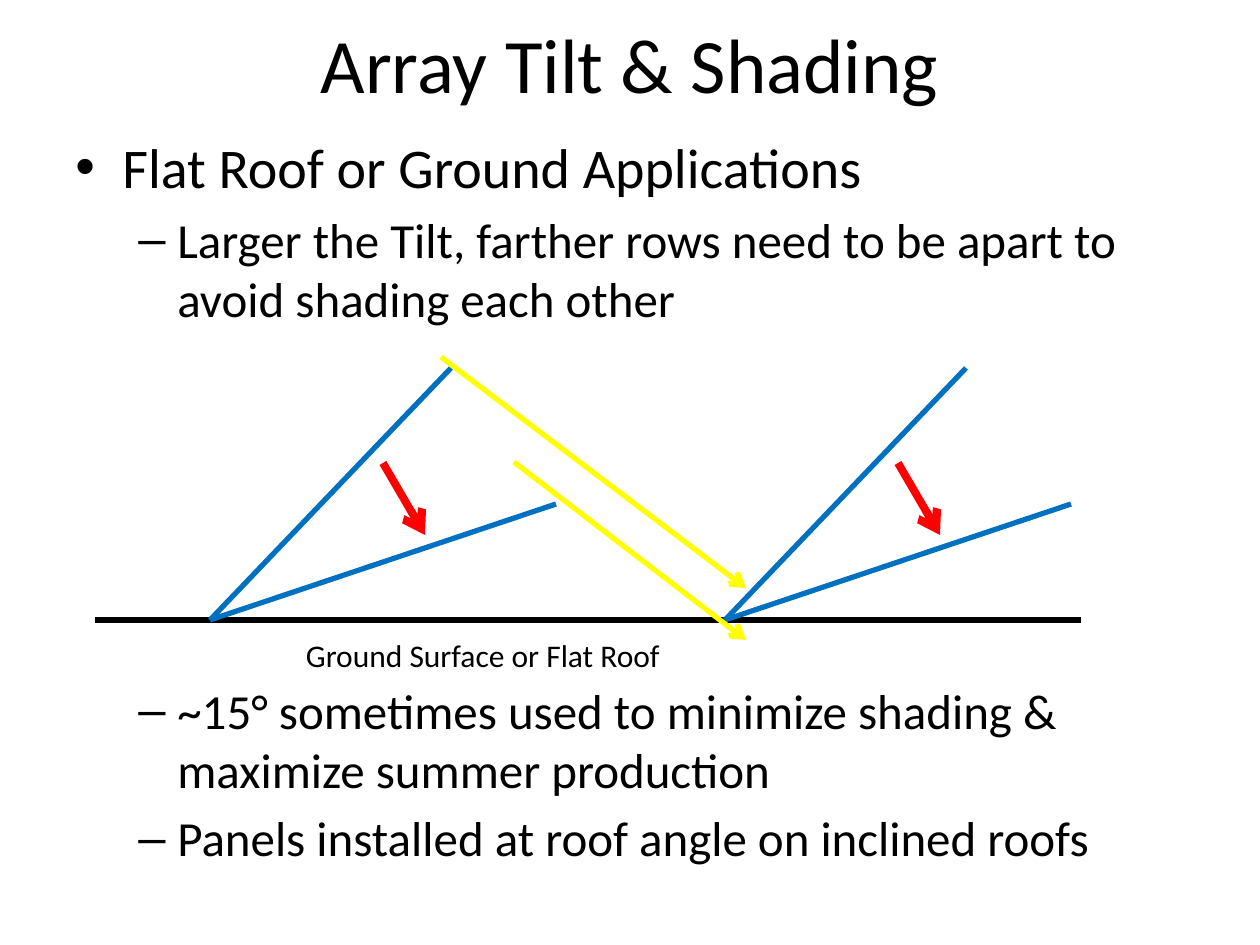
"""Builds the slide on array tilt and row shading."""
from lxml import etree
from pptx import Presentation
from pptx.dml.color import RGBColor
from pptx.enum.shapes import MSO_CONNECTOR
from pptx.enum.text import MSO_ANCHOR, PP_ALIGN
from pptx.oxml.ns import qn
from pptx.util import Pt

STRAIGHT = MSO_CONNECTOR.STRAIGHT
TOP, MIDDLE = MSO_ANCHOR.TOP, MSO_ANCHOR.MIDDLE
LEFT, CENTER = PP_ALIGN.LEFT, PP_ALIGN.CENTER
PX = 914400 / 126
THEME = {
    "font": "Calibri",
    "text": "000000", "ground": "000000", "panel": "0070C0", "ray": "FFFF00", "turn": "FF0000",
    "title": 44, "heading": 32, "point": 28, "label": 18,
}


def emu(px):
    return round(px * PX)


def write(frame, text, first=False, size="point", align=LEFT, bullet=None, margin=0, hang=0, before=0):
    para = frame.paragraphs[0] if first else frame.add_paragraph()
    para.alignment = align
    para.space_before = Pt(before)
    span = para.add_run()
    span.text = text
    span.font.name = THEME["font"]
    span.font.size = Pt(THEME[size])
    span.font.color.rgb = RGBColor.from_string(THEME["text"])
    if bullet:
        properties = para._p.get_or_add_pPr()
        properties.set("marL", str(emu(margin)))
        properties.set("indent", str(-emu(hang)))
        etree.SubElement(properties, qn("a:buFont"), typeface="Arial")
        etree.SubElement(properties, qn("a:buChar"), char=bullet)


deck = Presentation()
deck.slide_width, deck.slide_height = emu(1260), emu(945)
page = deck.slides.add_slide(deck.slide_layouts[6])

heading = {"size": "heading", "bullet": "•", "margin": 47, "hang": 47, "before": 6.4}
point = {"bullet": "–", "margin": 102, "hang": 39, "before": 5.6}
below_diagram = {**point, "before": 202}
texts = [
    ((63, 0, 1134, 126), MIDDLE, [
        ("Array Tilt & Shading", {"size": "title", "align": CENTER})]),
    ((63, 126, 1134, 777), TOP, [
        ("Flat Roof or Ground Applications", heading),
        ("Larger the Tilt, farther rows need to be apart to avoid shading each other", point),
        ("~15° sometimes used to minimize shading & maximize summer production", below_diagram),
        ("Panels installed at roof angle on inclined roofs", point)]),
    ((231, 630, 504, 50), TOP, [
        ("Ground Surface or Flat Roof", {"size": "label", "align": CENTER})]),
]
for place, anchor, lines in texts:
    box = page.shapes.add_textbox(*map(emu, place))
    box.text_frame.word_wrap = True
    box.text_frame.vertical_anchor = anchor
    for index, (text, style) in enumerate(lines):
        write(box.text_frame, text, first=index == 0, **style)

strokes = [("ground", 3, False, (1081, 620, 95, 620))]
for base in (210, 725):
    strokes += [
        ("panel", 3, False, (base + 241, 368, base, 620)),
        ("panel", 3, False, (base + 346, 504, base, 620)),
        ("turn", 4.5, True, (base + 173, 463, base + 215, 535)),
    ]
strokes += [
    ("ray", 3, True, (441, 357, 746, 588)),
    ("ray", 3, True, (514, 462, 746, 640)),
]
for color, width, arrow, ends in strokes:
    connector = page.shapes.add_connector(STRAIGHT, *map(emu, ends))
    connector.line.color.rgb = RGBColor.from_string(THEME[color])
    connector.line.width = Pt(width)
    if arrow:
        etree.SubElement(connector.line._get_or_add_ln(), qn("a:tailEnd"), type="arrow")
    etree.SubElement(connector._element.spPr, qn("a:effectLst"))

deck.save("out.pptx")
